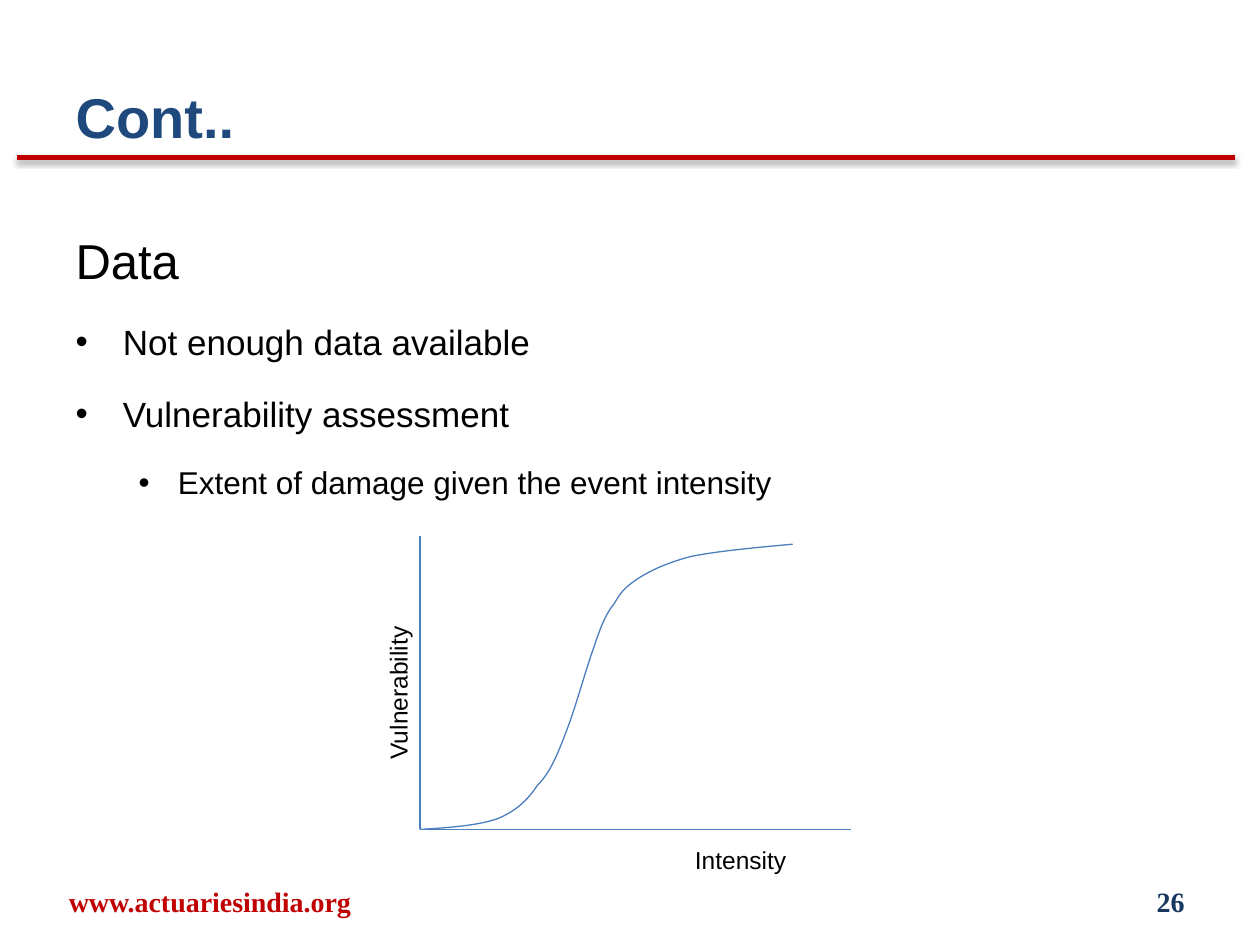
from dataclasses import dataclass

from lxml import etree
from pptx import Presentation
from pptx.dml.color import RGBColor
from pptx.enum.shapes import MSO_CONNECTOR
from pptx.enum.text import MSO_ANCHOR, MSO_AUTO_SIZE, PP_ALIGN
from pptx.oxml.ns import qn
from pptx.util import Pt

STRAIGHT = MSO_CONNECTOR.STRAIGHT
TOP, MIDDLE = MSO_ANCHOR.TOP, MSO_ANCHOR.MIDDLE
LEFT, CENTER, RIGHT = PP_ALIGN.LEFT, PP_ALIGN.CENTER, PP_ALIGN.RIGHT
NO_FIT = MSO_AUTO_SIZE.NONE

BLACK, RED, NAVY = "000000", "C00000", "17375E"
TITLE_BLUE, CURVE_BLUE = "1F497D", "4B7EBC"
SANS, SERIF = "Arial", "Times New Roman"


@dataclass
class Label:
    text: str
    left: float
    top: float
    width: float
    height: float
    size: float = 14
    font: str = SANS
    color: str = BLACK
    bold: bool = False
    align: PP_ALIGN = LEFT
    anchor: MSO_ANCHOR = TOP
    rotation: float = 0
    wrap: bool = False


@dataclass
class Rule:
    start: tuple[float, float]
    end: tuple[float, float]
    color: str = CURVE_BLUE
    width: float = 0.75
    shadow: bool = False


@dataclass
class Item:
    text: str
    size: float
    level: int = 0
    margin: float = 0
    hanging: float = 0
    space_before: float = 5.5


ORIGIN = (240, 474)

RULES = [
    Rule((9.5, 90), (705.5, 90), RED, 3, True),
    Rule((240, 306), ORIGIN),
    Rule((486, 474), ORIGIN),
]

ITEMS = [
    Item("Data", 28, space_before=0),
    Item("Not enough data available", 20, margin=27, hanging=27),
    Item("Vulnerability assessment", 20, margin=27, hanging=27),
    Item("Extent of damage given the event intensity", 18, 1, 58.5, 22.5),
]

LABELS = [
    Label("www.actuariesindia.org", 6, 500.5, 228, 28.75, 16, SERIF, RED, True,
          CENTER, MIDDLE, wrap=True),
    Label("26", 516, 500.5, 168, 28.75, 16, SERIF, NAVY, True,
          RIGHT, MIDDLE, wrap=True),
    Label("Intensity", 390, 479.5, 67, 24.25),
    Label("Vulnerability", 182.25, 383.75, 90.5, 24.25, rotation=270),
]

CURVE_START = (240.3, 473.7)
CURVE_POINTS = [
    (256.3, 473), (272.2, 472.3), (283.7, 468),
    (294.5, 463.7), (301, 457.9), (307.4, 449.3),
    (314.6, 440.6), (319, 429.8), (324, 416.9),
    (329, 403.9), (334.8, 382.3), (339.1, 370.8),
    (343.4, 358.6), (346.3, 351.4), (350.6, 344.9),
    (355, 338.4), (357.1, 335.5), (364.3, 331.2),
    (372.2, 326.2), (380.2, 321.8), (394.6, 318.2),
    (409.7, 314.6), (431.3, 313.2), (452.9, 311),
]


def rgb(color: str) -> RGBColor:
    return RGBColor.from_string(color)


def style(paragraph, size: float, font: str, color: str, bold: bool) -> None:
    paragraph.font.size = Pt(size)
    paragraph.font.name = font
    paragraph.font.bold = bold
    paragraph.font.color.rgb = rgb(color)


def place(shape, left: float, top: float, width: float, height: float) -> None:
    shape.left, shape.top = Pt(left), Pt(top)
    shape.width, shape.height = Pt(width), Pt(height)


def draw_rule(page, rule: Rule) -> None:
    line = page.shapes.add_connector(
        STRAIGHT, *map(Pt, rule.start), *map(Pt, rule.end))
    line.line.color.rgb = rgb(rule.color)
    line.line.width = Pt(rule.width)
    effects = etree.SubElement(line._element.spPr, qn("a:effectLst"))
    if rule.shadow:
        shadow = etree.SubElement(
            effects, qn("a:outerShdw"), blurRad=str(Pt(3.1)),
            dist=str(Pt(1.6)), dir="5400000", rotWithShape="0")
        tint = etree.SubElement(shadow, qn("a:srgbClr"), val=BLACK)
        etree.SubElement(tint, qn("a:alpha"), val="38000")


def draw_label(page, label: Label) -> None:
    box = page.shapes.add_textbox(
        *map(Pt, (label.left, label.top, label.width, label.height)))
    box.rotation = label.rotation
    frame = box.text_frame
    frame.word_wrap = label.wrap
    frame.vertical_anchor = label.anchor
    paragraph = frame.paragraphs[0]
    paragraph.text = label.text
    paragraph.alignment = label.align
    style(paragraph, label.size, label.font, label.color, label.bold)


def draw_title(page, text: str) -> None:
    title = page.shapes.title
    place(title, 36, 21.6, 648, 90)
    title.text_frame.vertical_anchor = MIDDLE
    title.text_frame.auto_size = NO_FIT
    paragraph = title.text_frame.paragraphs[0]
    paragraph.text = text
    paragraph.alignment = LEFT
    style(paragraph, 32, SANS, TITLE_BLUE, True)


def draw_body(page, items: list[Item]) -> None:
    body = page.placeholders[1]
    place(body, 36, 108, 648, 356.4)
    frame = body.text_frame
    frame.auto_size = NO_FIT
    frame.margin_top = Pt(7)
    for index, item in enumerate(items):
        paragraph = frame.add_paragraph() if index else frame.paragraphs[0]
        paragraph.text = item.text
        paragraph.level = item.level
        paragraph.line_spacing = 1.5
        paragraph.space_before = Pt(item.space_before)
        properties = paragraph._p.get_or_add_pPr()
        properties.set("marL", str(Pt(item.margin)))
        properties.set("indent", str(-Pt(item.hanging)))
        if item.hanging:
            etree.SubElement(properties, qn("a:buFont"), typeface=SANS)
            etree.SubElement(properties, qn("a:buChar"), char="•")
        else:
            etree.SubElement(properties, qn("a:buNone"))
        style(paragraph, item.size, SANS, BLACK, False)


def draw_curve(page, start: tuple, points: list[tuple]) -> None:
    builder = page.shapes.build_freeform(*start, scale=float(Pt(1)))
    builder.add_line_segments(points, close=False)
    curve = builder.convert_to_shape()
    curve.shadow.inherit = False
    curve.fill.background()
    curve.line.color.rgb = rgb(CURVE_BLUE)
    curve.line.width = Pt(0.75)
    segments = list(curve._element.iter(qn("a:lnTo")))
    for first in range(0, len(segments), 3):
        bezier = etree.Element(qn("a:cubicBezTo"))
        segments[first].addprevious(bezier)
        for segment in segments[first:first + 3]:
            bezier.append(segment[0])
            segment.getparent().remove(segment)


def main() -> None:
    deck = Presentation()
    deck.slide_width, deck.slide_height = Pt(720), Pt(540)
    page = deck.slides.add_slide(deck.slide_layouts[1])
    draw_title(page, "Cont..")
    draw_body(page, ITEMS)
    for rule in RULES:
        draw_rule(page, rule)
    for label in LABELS:
        draw_label(page, label)
    draw_curve(page, CURVE_START, CURVE_POINTS)
    deck.save("out.pptx")


if __name__ == "__main__":
    main()
